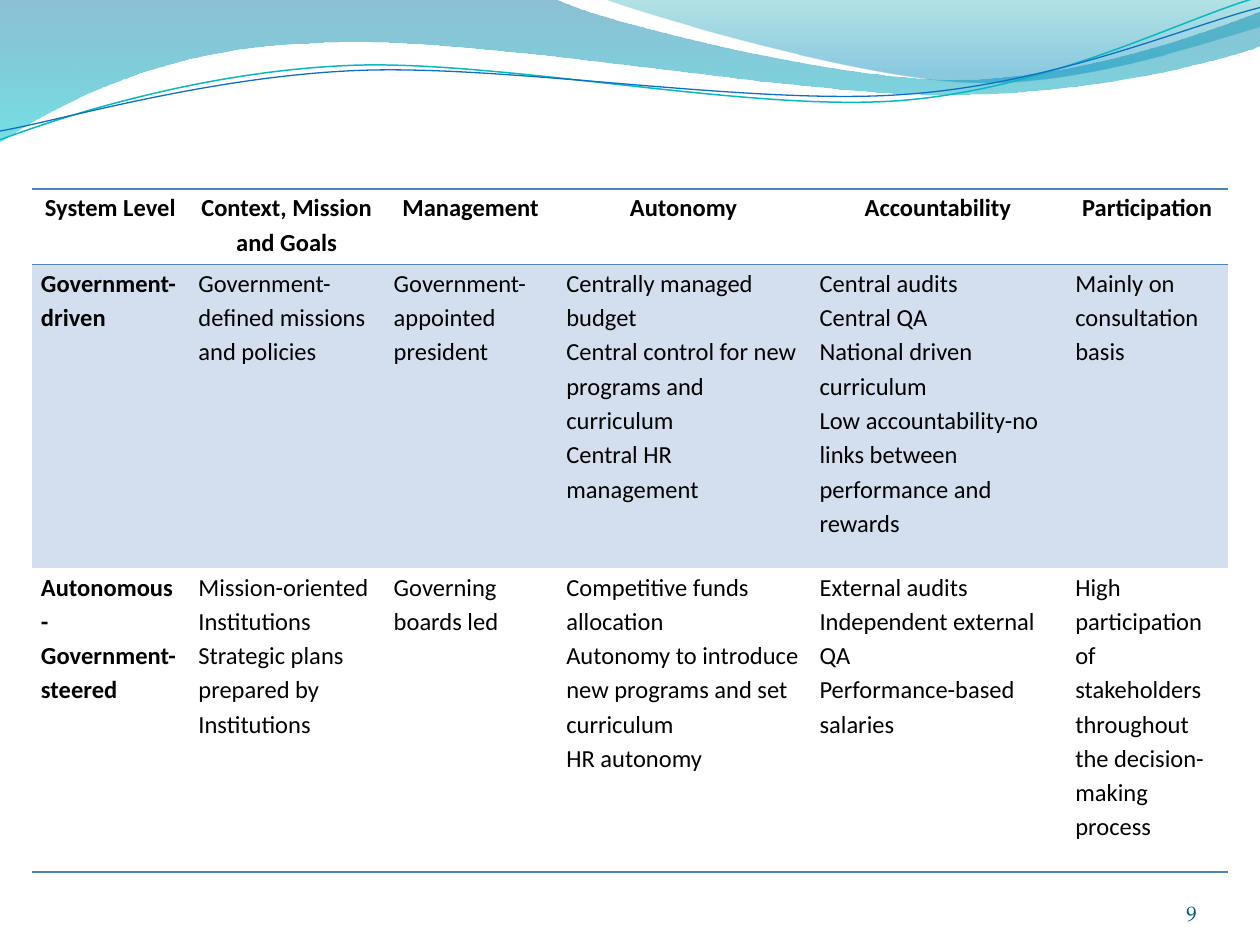
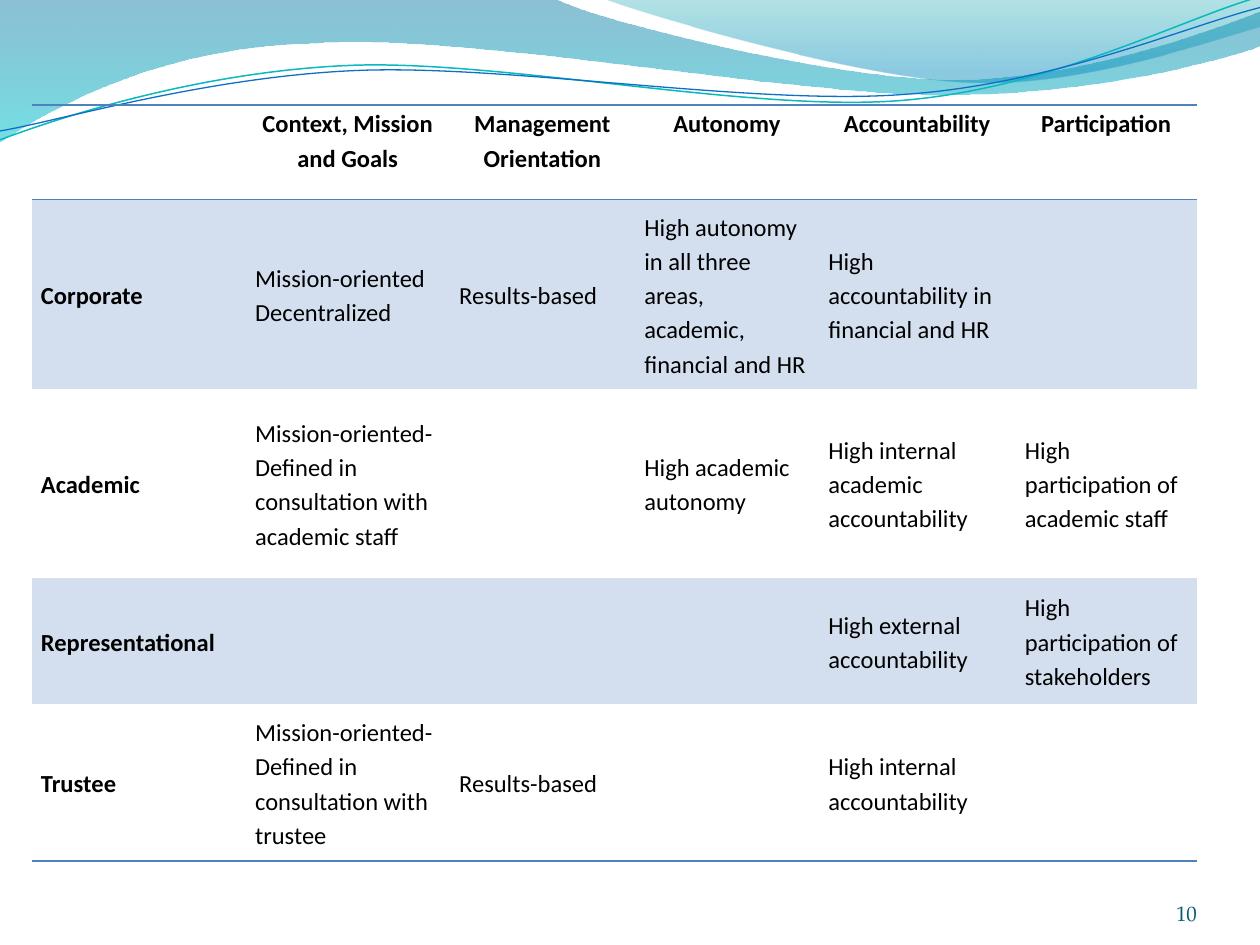
from lxml import etree
from pptx import Presentation
from pptx.dml.color import RGBColor
from pptx.enum.text import MSO_ANCHOR, PP_ALIGN
from pptx.oxml.ns import qn
from pptx.util import Inches, Pt

TOP, MID, LOW = MSO_ANCHOR.TOP, MSO_ANCHOR.MIDDLE, MSO_ANCHOR.BOTTOM
LEFT, MIDDLE, RIGHT = PP_ALIGN.LEFT, PP_ALIGN.CENTER, PP_ALIGN.RIGHT
RULE, BAND, INK, PAGE = "4F81BD", "D3DFEE", "000000", "045D75"
BODY, NUMBER = "Calibri", "TeX Gyre Pagella"
PLAIN = "{2D5ABB26-0587-4C30-8999-92F81FD0307C}"  # table style without grid
INSET = Pt(5.4)

# Waves: each part is one point (line) or three points (curve)
WAVES = [
    ([[(0, 0)], [(4.4, -0.01)],
      [(4.76, 0.17), (6.64, 0.63), (7.58, 0.63)],
      [(8.53, 0.63), (9.58, 0.26), (10, 0.09)], [(10.01, 0.36)],
      [(9.83, 0.44), (8.7, 0.76), (7.46, 0.75)],
      [(6.22, 0.75), (3.82, 0.28), (2.57, 0.34)],
      [(1.29, 0.36), (0.46, 0.83), (-0.01, 1.13)], [(0, 0)]],
     [(0, "0074A1", 45), (1, "00C6CF", 55)]),
    ([[(4.79, -0.01)],
      [(5.09, 0.11), (6.82, 0.62), (7.69, 0.65)],
      [(8.56, 0.69), (9.61, 0.32), (10, 0.21)],
      [(10, 0)], [(4.79, -0.01)]],
     [(0, "00A1A9", 30), (0.8, "008BBF", 45)]),
]
CURVES = [
    ([[(0, 1.11)],
      [(0.48, 0.93), (1.58, 0.57), (2.77, 0.52)],
      [(3.95, 0.47), (5.93, 0.89), (7.13, 0.8)],
      [(8.33, 0.71), (9.38, 0.15), (9.98, -0.02)]], "0AB8BF", 0.85),
    ([[(0, 1.04)],
      [(0.47, 0.96), (1.64, 0.61), (2.83, 0.56)],
      [(4.03, 0.51), (5.97, 0.84), (7.17, 0.75)],
      [(8.36, 0.67), (9.41, 0.21), (10, 0.06)]], "0F6FC6", 0.75),
]

# Each cell is a list of paragraphs
LEVELS = [
    [["System Level"], ["Context, Mission and Goals"], ["Management"],
     ["Autonomy"], ["Accountability"], ["Participation"]],
    [["Government-driven"],
     ["Government-defined missions and policies"],
     ["Government-appointed president"],
     ["Centrally managed budget",
      "Central control for new programs and curriculum",
      "Central HR management"],
     ["Central audits", "Central QA", "National driven curriculum",
      "Low accountability-no links between performance and rewards"],
     ["Mainly on consultation basis"]],
    [["Autonomous-", "Government-steered"],
     ["Mission-oriented Institutions",
      "Strategic plans prepared by Institutions"],
     ["Governing boards led"],
     ["Competitive funds allocation",
      "Autonomy to introduce new programs and set curriculum",
      "HR autonomy"],
     ["External audits", "Independent external QA",
      "Performance-based salaries"],
     ["High participation of stakeholders throughout the "
      "decision-making process"]],
]
MODELS = [
    [[], ["Context, Mission and Goals"], ["Management Orientation"],
     ["Autonomy"], ["Accountability"], ["Participation"]],
    [["Corporate"], ["Mission-oriented Decentralized"], ["Results-based"],
     ["High autonomy in all three areas, academic, financial and HR"],
     ["High accountability in financial and HR"], []],
    [["Academic"],
     ["Mission-oriented- Defined in consultation with academic staff"], [],
     ["High academic autonomy"], ["High internal academic accountability"],
     ["High participation of academic staff"]],
    [["Representational"], [], [], [], ["High external accountability"],
     ["High participation of stakeholders"]],
    [["Trustee"],
     ["Mission-oriented-Defined in consultation with trustee"],
     ["Results-based"], [], ["High internal accountability"], []],
]


def color(code):
    return RGBColor.from_string(code)


def write(para, text, face, size, ink, bold=False):
    run = para.add_run()
    run.text = text
    font = run.font
    font.name, font.size, font.bold = face, Pt(size), bold
    font.color.rgb = color(ink)


def outline(slide, parts, close):
    points = [(Inches(x), Inches(y)) for part in parts for x, y in part]
    pen = slide.shapes.build_freeform(*points[0], scale=1.0)
    pen.add_line_segments(points[1:], close=close)
    shape = pen.convert_to_shape()
    shape.shadow.inherit = False
    # Join each three-point part into one curve
    lines = iter(list(shape._element.spPr.iter(qn("a:lnTo"))))
    for part in parts[1:]:
        steps = [next(lines) for _ in part]
        if len(steps) == 3:
            bend = etree.Element(qn("a:cubicBezTo"))
            steps[0].addprevious(bend)
            for step in steps:
                bend.append(step[0])
                step.getparent().remove(step)
    return shape


def add_waves(slide):
    # Translucent bands
    for parts, stops in WAVES:
        wave = outline(slide, parts, True)
        wave.line.fill.background()
        wave.fill.gradient()
        wave.fill.gradient_angle = 270
        for stop, (place, code, _) in zip(wave.fill.gradient_stops, stops):
            stop.position = place
            stop.color.rgb = color(code)
        for tint, (_, _, alpha) in zip(
                wave._element.spPr.iter(qn("a:srgbClr")), stops):
            etree.SubElement(tint, qn("a:alpha"), val=str(alpha * 1000))
    # Thin lines
    for parts, code, width in CURVES:
        curve = outline(slide, parts, False)
        curve.fill.background()
        curve.line.color.rgb = color(code)
        curve.line.width = Pt(width)


def add_page(slide, number):
    box = slide.shapes.add_textbox(
        Inches(8.67), Inches(6.95), Inches(0.83), Inches(0.4))
    frame = box.text_frame
    frame.word_wrap = True
    frame.vertical_anchor = LOW
    frame.margin_left = frame.margin_right = 0
    frame.margin_top = frame.margin_bottom = 0
    para = frame.paragraphs[0]
    para.alignment = RIGHT
    write(para, str(number), NUMBER, 12, PAGE)


def rule(cell, sides):
    """Draw borders on the named sides and clear the others."""
    props = cell._tc.get_or_add_tcPr()
    for spot, side in enumerate("LRTB"):
        line = etree.Element(qn("a:ln" + side), w=str(Pt(1)))
        if side in sides:
            fill = etree.SubElement(line, qn("a:solidFill"))
            etree.SubElement(fill, qn("a:srgbClr"), val=RULE)
        else:
            etree.SubElement(line, qn("a:noFill"))
        props.insert(spot, line)


def fill_cell(cell, texts, head, bold, anchor):
    cell.margin_left = cell.margin_right = INSET
    cell.margin_top = cell.margin_bottom = 0
    cell.vertical_anchor = anchor
    frame = cell.text_frame
    for i, text in enumerate(texts):
        para = frame.add_paragraph() if i else frame.paragraphs[0]
        para.alignment = MIDDLE if head else LEFT
        para.line_spacing = 1.15
        write(para, text, BODY, 14, INK, bold)


def add_grid(slide, left, top, widths, heights, data, anchor):
    table = slide.shapes.add_table(
        len(heights), len(widths), Inches(left), Inches(top),
        Inches(sum(widths)), Inches(sum(heights))).table
    table._tbl.tblPr.find(qn("a:tableStyleId")).text = PLAIN
    table.horz_banding = False
    for col, width in zip(table.columns, widths):
        col.width = Inches(width)
    last = len(heights) - 1
    for r, (row, height) in enumerate(zip(data, heights)):
        table.rows[r].height = Inches(height)
        sides = {0: "TB", 1: "T", last: "B"}.get(r, "")
        for c, texts in enumerate(row):
            cell = table.cell(r, c)
            head = r == 0
            fill_cell(cell, texts, head, head or c == 0,
                      TOP if head else anchor)
            if r % 2:
                cell.fill.solid()
                cell.fill.fore_color.rgb = color(BAND)
            else:
                cell.fill.background()
            rule(cell, sides)


def add_slide(deck, number, *grid):
    slide = deck.slides.add_slide(deck.slide_layouts[6])
    add_waves(slide)
    add_page(slide, number)
    add_grid(slide, *grid)


def main():
    deck = Presentation()
    deck.slide_width, deck.slide_height = Inches(10), Inches(7.5)
    add_slide(deck, 9, 0.25, 1.5, [1.25, 1.55, 1.37, 2.01, 2.03, 1.29],
              [0.6, 2.41, 2.41], LEVELS, TOP)
    add_slide(deck, 10, 0.25, 5 / 6, [1.7, 1.62, 1.47, 1.46, 1.56, 1.44],
              [0.75, 1.5, 1.5, 1, 1.25], MODELS, MID)
    deck.save("out.pptx")


if __name__ == "__main__":
    main()
